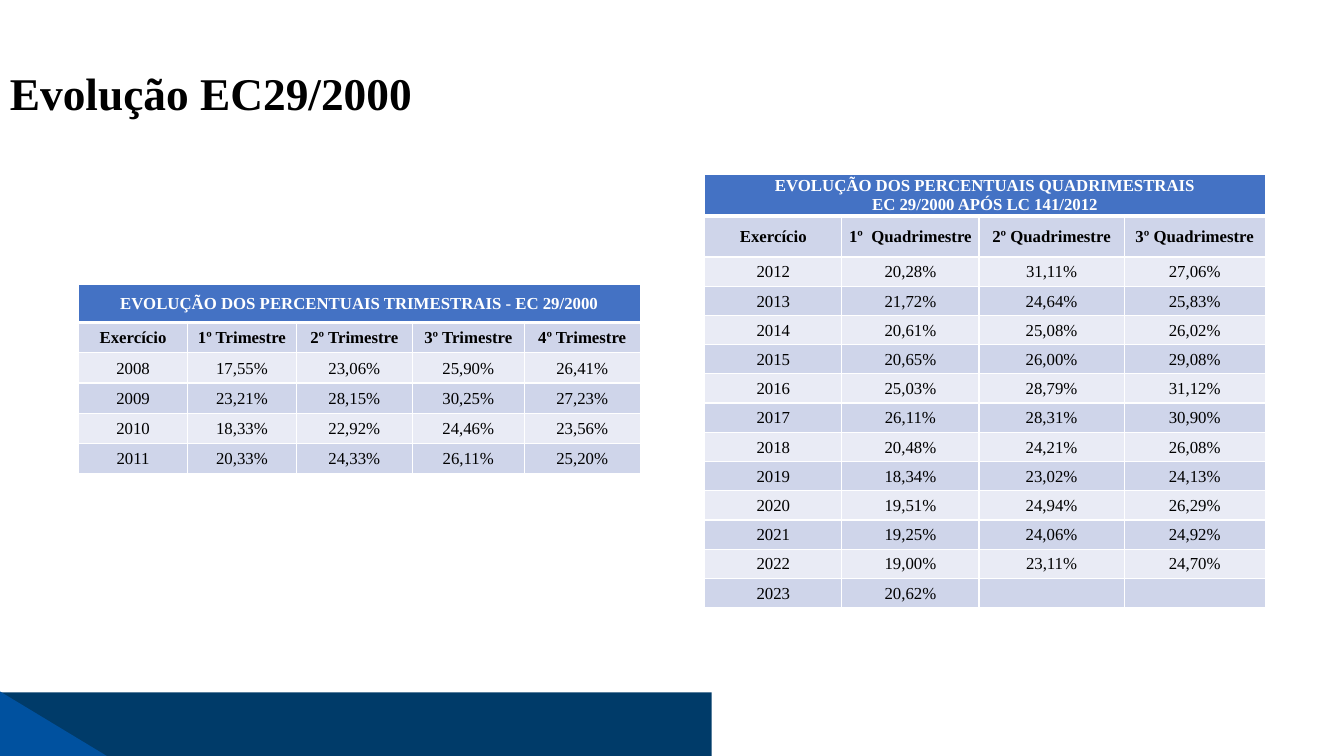
from lxml import etree
from pptx import Presentation
from pptx.dml.color import RGBColor
from pptx.enum.shapes import MSO_SHAPE
from pptx.enum.text import MSO_ANCHOR, PP_ALIGN
from pptx.oxml.ns import qn
from pptx.util import Inches, Pt

RECTANGLE = MSO_SHAPE.RECTANGLE
RIGHT_TRIANGLE = MSO_SHAPE.RIGHT_TRIANGLE
MIDDLE = MSO_ANCHOR.MIDDLE
CENTER = PP_ALIGN.CENTER

FONT = "Times New Roman"
BLACK = RGBColor(0x00, 0x00, 0x00)
WHITE = RGBColor(0xFF, 0xFF, 0xFF)
NAVY = RGBColor(0x00, 0x3B, 0x69)
BLUE = RGBColor(0x00, 0x51, 0x9F)
HEADER_BLUE = RGBColor(0x44, 0x72, 0xC4)
DARK_BAND = RGBColor(0xCF, 0xD5, 0xEA)
LIGHT_BAND = RGBColor(0xE9, 0xEB, 0xF5)

QUARTERS = [
    ["Exercício", "1º Trimestre", "2º Trimestre", "3º Trimestre", "4º Trimestre"],
    ["2008", "17,55%", "23,06%", "25,90%", "26,41%"],
    ["2009", "23,21%", "28,15%", "30,25%", "27,23%"],
    ["2010", "18,33%", "22,92%", "24,46%", "23,56%"],
    ["2011", "20,33%", "24,33%", "26,11%", "25,20%"],
]
FOUR_MONTH_PERIODS = [
    ["Exercício", "1º  Quadrimestre", "2º Quadrimestre", "3º Quadrimestre"],
    ["2012", "20,28%", "31,11%", "27,06%"],
    ["2013", "21,72%", "24,64%", "25,83%"],
    ["2014", "20,61%", "25,08%", "26,02%"],
    ["2015", "20,65%", "26,00%", "29,08%"],
    ["2016", "25,03%", "28,79%", "31,12%"],
    ["2017", "26,11%", "28,31%", "30,90%"],
    ["2018", "20,48%", "24,21%", "26,08%"],
    ["2019", "18,34%", "23,02%", "24,13%"],
    ["2020", "19,51%", "24,94%", "26,29%"],
    ["2021", "19,25%", "24,06%", "24,92%"],
    ["2022", "19,00%", "23,11%", "24,70%"],
    ["2023", "20,62%", "", ""],
]


def add_run(paragraph, text, size, color, bold):
    run = paragraph.add_run()
    run.text = text
    run.font.name = FONT
    run.font.size = Pt(size)
    run.font.color.rgb = color
    run.font.bold = bold


def style_cell(cell, row_index, fill_color):
    """Set borders, fill and margins, with a thick line under the title row."""
    properties = cell._tc.get_or_add_tcPr()
    top_width = 3 if row_index == 1 else 1
    bottom_width = 3 if row_index == 0 else 1
    for side, width in (("L", 1), ("R", 1), ("T", top_width), ("B", bottom_width)):
        line = etree.SubElement(properties, qn(f"a:ln{side}"), w=str(Pt(width)))
        line_fill = etree.SubElement(line, qn("a:solidFill"))
        etree.SubElement(line_fill, qn("a:srgbClr"), val=str(WHITE))
    cell.fill.solid()
    cell.fill.fore_color.rgb = fill_color
    cell.margin_left = cell.margin_right = cell.margin_top = Inches(0.01)
    cell.margin_bottom = 0
    cell.vertical_anchor = MIDDLE


presentation = Presentation()
presentation.slide_width = Inches(13.33)
presentation.slide_height = Inches(7.5)
slide = presentation.slides.add_slide(presentation.slide_layouts[6])

for preset, top, width, height, color in (
    (RECTANGLE, 6.87, 7.06, 0.63, NAVY),
    (RIGHT_TRIANGLE, 6.86, 1.06, 0.64, BLUE),
):
    shape = slide.shapes.add_shape(
        preset, 0, Inches(top), Inches(width), Inches(height))
    shape.shadow.inherit = False
    shape.fill.solid()
    shape.fill.fore_color.rgb = color
    shape.line.fill.background()

title_frame = slide.shapes.add_textbox(
    0, Inches(0.7), Inches(11), Inches(0.51)).text_frame
title_frame.word_wrap = True
title_frame.vertical_anchor = MIDDLE
title_frame.paragraphs[0].line_spacing = 0.9
add_run(title_frame.paragraphs[0], "Evolução EC29/2000", 32.4, BLACK, True)

for left, top, column_widths, title_height, heading_height, row_height, titles, rows in (
    (0.78, 2.82, [1.08, 1.08, 1.15, 1.11, 1.15], 0.38, 0.3, 0.3,
     ["EVOLUÇÃO DOS PERCENTUAIS TRIMESTRAIS - EC 29/2000"], QUARTERS),
    (6.99, 1.73, [1.36, 1.36, 1.44, 1.4], 0.41, 0.41, 0.29,
     ["EVOLUÇÃO DOS PERCENTUAIS QUADRIMESTRAIS", "EC 29/2000 APÓS LC 141/2012"],
     FOUR_MONTH_PERIODS),
):
    row_heights = [title_height, heading_height] + [row_height] * (len(rows) - 1)
    table = slide.shapes.add_table(
        len(row_heights), len(column_widths), Inches(left), Inches(top),
        Inches(sum(column_widths)), Inches(sum(row_heights))).table
    for column, width in zip(table.columns, column_widths):
        column.width = Inches(width)
    for row, height in zip(table.rows, row_heights):
        row.height = Inches(height)

    for cell in table.rows[0].cells:
        style_cell(cell, 0, HEADER_BLUE)
    title_cell = table.cell(0, 0)
    title_cell.merge(table.cell(0, len(column_widths) - 1))
    for index, title in enumerate(titles):
        frame = title_cell.text_frame
        paragraph = frame.add_paragraph() if index else frame.paragraphs[0]
        paragraph.alignment = CENTER
        add_run(paragraph, title, 12, WHITE, True)

    for row_index, values in enumerate(rows, start=1):
        band = DARK_BAND if row_index % 2 else LIGHT_BAND
        for column_index, value in enumerate(values):
            cell = table.cell(row_index, column_index)
            style_cell(cell, row_index, band)
            paragraph = cell.text_frame.paragraphs[0]
            paragraph.alignment = CENTER
            if value:
                add_run(paragraph, value, 12, BLACK, row_index == 1)
            else:
                # Keeps the empty cell from stretching its row
                etree.SubElement(paragraph._p, qn("a:endParaRPr"), sz="1200")

presentation.save("out.pptx")
